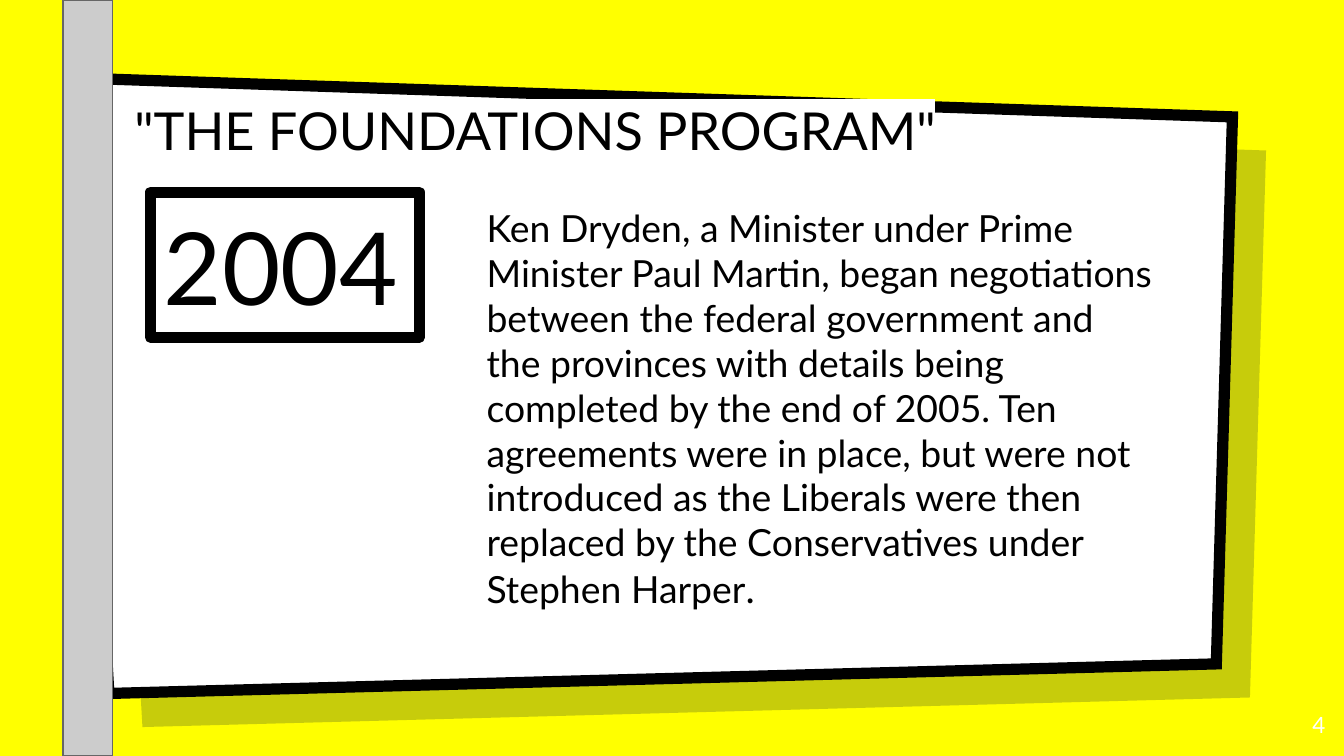
from lxml import etree
from pptx import Presentation
from pptx.dml.color import RGBColor
from pptx.enum.shapes import MSO_SHAPE
from pptx.enum.text import MSO_ANCHOR, MSO_AUTO_SIZE, PP_ALIGN
from pptx.oxml.ns import qn
from pptx.util import Inches, Pt

RECTANGLE = MSO_SHAPE.RECTANGLE
TOP, MIDDLE = MSO_ANCHOR.TOP, MSO_ANCHOR.MIDDLE
LEFT, RIGHT = PP_ALIGN.LEFT, PP_ALIGN.RIGHT
NO_AUTOFIT = MSO_AUTO_SIZE.NONE

YELLOW = RGBColor(0xFF, 0xFF, 0x00)
WHITE = RGBColor(0xFF, 0xFF, 0xFF)
BLACK = RGBColor(0x00, 0x00, 0x00)
NAVY = RGBColor(0x00, 0x19, 0x36)
LIGHT_GRAY = RGBColor(0xCC, 0xCC, 0xCC)
DARK_GRAY = RGBColor(0x66, 0x66, 0x66)
FONT = "Lato"

SLIDE_WIDTH = 10
SLIDE_HEIGHT = SLIDE_WIDTH * 9 / 16

TITLE = [('"THE FOUNDATIONS PROGRAM"', 28)]
YEAR = [("2004", 54)]
BODY = [
    ("Ken Dryden, a Minister under Prime Minister Paul Martin, began negotiations "
     "between the federal government and the provinces with details being completed "
     "by the end of 2005. Ten agreements were in place, but were not introduced as "
     "the Liberals were then replaced by the Conservatives under Stephen Harper", 20),
    (".", 21),
]
PAGE_NUMBER = [("4", 12)]
PANEL = [(0.55, 0.58), (9.17, 0.87), (9.05, 4.94), (0.81, 5.16)]
SHADOW_OFFSET = 0.25


def place(shape, left, top, width, height):
    shape.left, shape.top = Inches(left), Inches(top)
    shape.width, shape.height = Inches(width), Inches(height)


def write(shape, spans, color=BLACK, align=LEFT, anchor=TOP, after=0, highlight=None):
    frame = shape.text_frame
    frame.word_wrap = True
    frame.auto_size = NO_AUTOFIT
    frame.vertical_anchor = anchor
    frame.margin_left = frame.margin_right = Inches(0.1)
    frame.margin_top = frame.margin_bottom = Inches(0.1)
    para = frame.paragraphs[0]
    para.alignment = align
    para.space_before, para.space_after = Pt(0), Pt(after)
    for text, size in spans:
        span = para.add_run()
        span.text = text
        span.font.size = Pt(size)
        span.font.color.rgb = color
        span.font.name = FONT
    if highlight is not None:
        for properties in shape.element.iter(qn("a:rPr")):
            mark = etree.Element(qn("a:highlight"))
            etree.SubElement(mark, qn("a:srgbClr"), val=str(highlight))
            properties.find(qn("a:solidFill")).addnext(mark)


def style(shape, fill=None, line=None, width=0, join=None):
    shape.shadow.inherit = False
    if fill is None:
        shape.fill.background()
    else:
        shape.fill.solid()
        shape.fill.fore_color.rgb = fill
    if line is None:
        shape.line.fill.background()
        return
    shape.line.color.rgb = line
    shape.line.width = Pt(width)
    if join:
        etree.SubElement(shape.element.spPr.find(qn("a:ln")), qn(join))


def add_panel(page, offset):
    points = [(Inches(x + offset), Inches(y + offset)) for x, y in PANEL]
    builder = page.shapes.build_freeform(*points[0], scale=1.0)
    builder.add_line_segments(points[1:], close=True)
    return builder.convert_to_shape()


def add_rectangle(page, *bounds):
    return page.shapes.add_shape(RECTANGLE, *map(Inches, bounds))


deck = Presentation()
deck.slide_width, deck.slide_height = Inches(SLIDE_WIDTH), Inches(SLIDE_HEIGHT)
page = deck.slides.add_slide(deck.slide_layouts[1])
page.background.fill.solid()
page.background.fill.fore_color.rgb = YELLOW

shadow = add_panel(page, SHADOW_OFFSET)
style(shadow, NAVY)
tint = shadow.element.spPr.find(qn("a:solidFill"))[0]
etree.SubElement(tint, qn("a:alpha"), val="22000")
style(add_panel(page, 0), WHITE, BLACK, 6, "a:miter")

number = page.shapes.add_textbox(*map(Inches, (9.36, 5.19, 0.6, 0.43)))
write(number, PAGE_NUMBER, color=WHITE, align=RIGHT)

style(add_rectangle(page, 0.47, 0, 0.37, SLIDE_HEIGHT), LIGHT_GRAY, DARK_GRAY, 0.75)
year = add_rectangle(page, 1.12, 1.43, 2, 1.08)
style(year, line=BLACK, width=6, join="a:round")
write(year, YEAR, anchor=MIDDLE)

title, body = page.shapes.title, page.placeholders[1]
place(title, 0.9, 0.63, 6.39, 0.8)
place(body, 3.52, 1.43, 5.17, 3.28)
for holder in (title, body):
    holder.element.getparent().append(holder.element)

body_format = next(body.element.iter(qn("a:p"))).get_or_add_pPr()
body_format.set("marL", "0")
body_format.set("indent", "0")
etree.SubElement(body_format, qn("a:buNone"))
write(title, TITLE, after=4, highlight=WHITE)
write(body, BODY, highlight=WHITE)

deck.save("out.pptx")
